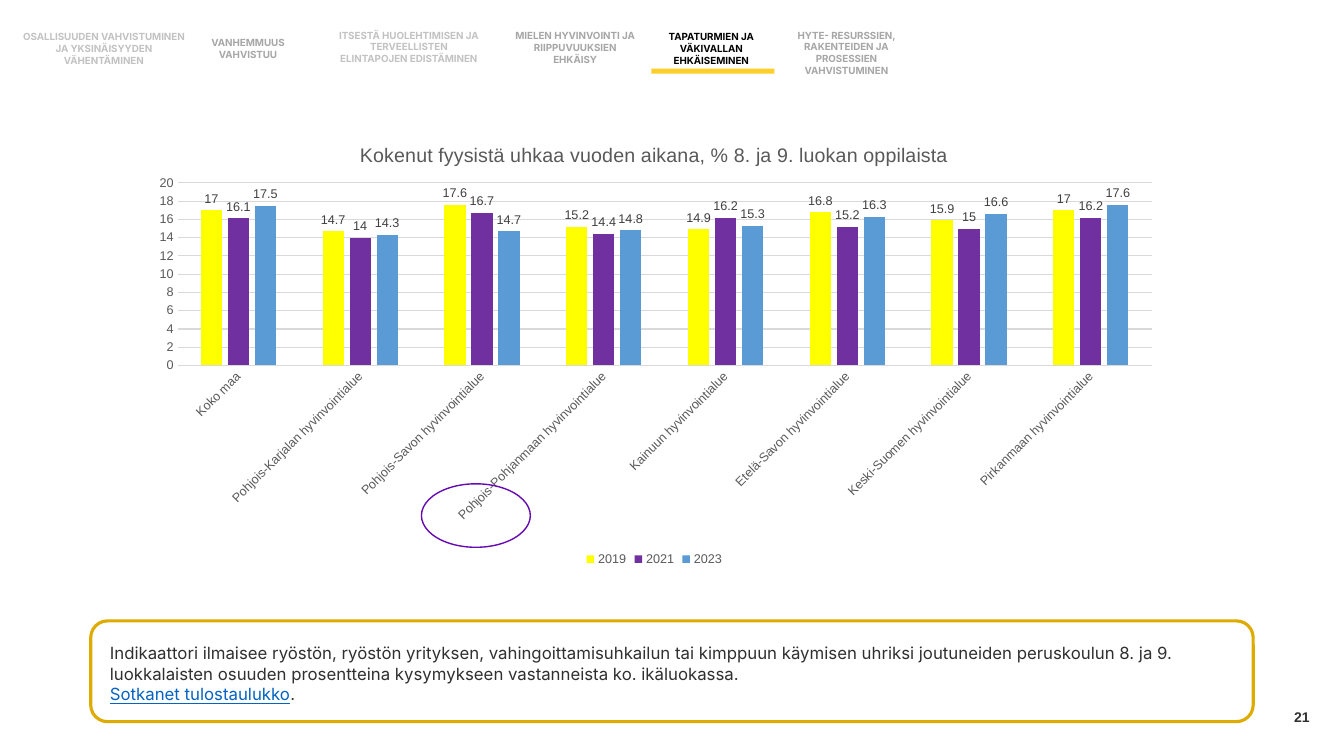
from dataclasses import dataclass

from lxml.etree import SubElement
from pptx import Presentation
from pptx.chart.data import CategoryChartData
from pptx.dml.color import RGBColor
from pptx.enum.chart import XL_CHART_TYPE as ChartType, XL_LABEL_POSITION as LabelPosition
from pptx.enum.chart import XL_LEGEND_POSITION as LegendPosition, XL_TICK_MARK as TickMark
from pptx.enum.shapes import MSO_SHAPE as Preset
from pptx.enum.text import MSO_ANCHOR as Anchor, PP_ALIGN as Align
from pptx.oxml.ns import qn
from pptx.util import Inches, Pt


@dataclass(frozen=True)
class Theme:
    heading_font: str = "Inter"
    chart_font: str = "Arial"
    tab_size: float = 7
    axis_size: float = 9
    page_size: float = 10
    body_size: float = 12
    title_size: float = 14
    faint: str = "C2C2C2"
    muted: str = "A6A6A6"
    active: str = "000000"
    body: str = "303030"
    page: str = "313131"
    link: str = "0563C1"
    axis: str = "595959"
    value: str = "404040"
    grid: str = "D9D9D9"
    marker: str = "FFCF29"
    frame: str = "DEAC00"
    highlight: str = "660AB2"


@dataclass(frozen=True)
class Box:
    left: float
    top: float
    width: float
    height: float

    def inches(self) -> list:
        return [Inches(n) for n in (self.left, self.top, self.width, self.height)]


@dataclass(frozen=True)
class Tab:
    label: str
    box: Box
    color: str


@dataclass(frozen=True)
class Outline:
    preset: Preset
    box: Box
    fill: str = ""
    line: str = ""
    weight: float = 0


@dataclass(frozen=True)
class Year:
    name: str
    color: str
    shares: tuple


THEME = Theme()

TABS = (
    Tab("OSALLISUUDEN VAHVISTUMINEN JA YKSINÄISYYDEN VÄHENTÄMINEN", Box(0.22, 0.36, 1.62, 0.24), THEME.faint),
    Tab("VANHEMMUUS VAHVISTUU", Box(1.85, 0.42, 1.22, 0.12), THEME.muted),
    Tab("ITSESTÄ HUOLEHTIMISEN JA TERVEELLISTEN ELINTAPOJEN EDISTÄMINEN", Box(3.35, 0.29, 1.41, 0.35), THEME.faint),
    Tab("MIELEN HYVINVOINTI JA RIIPPUVUUKSIEN EHKÄISY", Box(5.07, 0.35, 1.27, 0.24), THEME.muted),
    Tab("TAPATURMIEN JA VÄKIVALLAN EHKÄISEMINEN", Box(6.42, 0.36, 1.27, 0.24), THEME.active),
    Tab("HYTE- RESURSSIEN, RAKENTEIDEN JA PROSESSIEN\nVAHVISTUMINEN", Box(7.69, 0.35, 1.41, 0.35), THEME.muted),
)
TAB_MARKER = Outline(Preset.RECTANGLE, Box(6.46, 0.68, 1.22, 0.05), fill=THEME.marker)
INDICATOR_FRAME = Outline(Preset.ROUNDED_RECTANGLE, Box(0.9, 6.16, 11.53, 1), line=THEME.frame, weight=2.25)
REGION_HIGHLIGHT = Outline(Preset.OVAL, Box(4.18, 4.8, 1.08, 0.63), line=THEME.highlight, weight=1)

CHART_TITLE = "Kokenut fyysistä uhkaa vuoden aikana, % 8. ja 9. luokan oppilaista"
REGIONS = ["Koko maa"] + [f"{region} hyvinvointialue" for region in (
    "Pohjois-Karjalan", "Pohjois-Savon", "Pohjois-Pohjanmaan", "Kainuun",
    "Etelä-Savon", "Keski-Suomen", "Pirkanmaan")]
YEARS = (
    Year("2019", "FFFF00", (17, 14.7, 17.6, 15.2, 14.9, 16.8, 15.9, 17)),
    Year("2021", "7030A0", (16.1, 14, 16.7, 14.4, 16.2, 15.2, 15, 16.2)),
    Year("2023", "5B9BD5", (17.5, 14.3, 14.7, 14.8, 15.3, 16.3, 16.6, 17.6)),
)
INDICATOR = (
    "Indikaattori ilmaisee ryöstön, ryöstön yrityksen, vahingoittamisuhkailun tai kimppuun "
    "käymisen uhriksi joutuneiden peruskoulun 8. ja 9. luokkalaisten osuuden prosentteina "
    "kysymykseen vastanneista ko. ikäluokassa."
)


def style(font, name: str, size: float, color: str, bold: bool = False) -> None:
    font.name, font.size, font.bold = name, Pt(size), bold
    font.color.rgb = RGBColor.from_string(color)


def add_text(slide, box: Box, text: str, font: tuple, align=Align.LEFT, anchor=Anchor.MIDDLE):
    frame = slide.shapes.add_textbox(*box.inches()).text_frame
    frame.word_wrap, frame.vertical_anchor = True, anchor
    frame.margin_left = frame.margin_right = frame.margin_top = frame.margin_bottom = 0
    frame.text = text
    for paragraph in frame.paragraphs:
        paragraph.alignment = align
        for run in paragraph.runs:
            style(run.font, *font)
    return frame


def add_outline(slide, outline: Outline) -> None:
    shape = slide.shapes.add_shape(outline.preset, *outline.box.inches())
    shape.shadow.inherit = False
    if outline.fill:
        shape.fill.solid()
        shape.fill.fore_color.rgb = RGBColor.from_string(outline.fill)
    else:
        shape.fill.background()
    if outline.line:
        shape.line.color.rgb = RGBColor.from_string(outline.line)
        shape.line.width = Pt(outline.weight)
    else:
        shape.line.fill.background()


def place_plot(chart, x: float, y: float, w: float, h: float) -> None:
    """Fix the inner plot area, in fractions of the chart."""
    plot_area = chart.plots[0]._element.getparent()
    layout = plot_area.find(qn("c:layout"))
    if layout is None:
        layout = SubElement(plot_area, qn("c:layout"))
        plot_area.insert(0, layout)
    manual = SubElement(layout, qn("c:manualLayout"))
    settings = {"layoutTarget": "inner", "xMode": "edge", "yMode": "edge", "x": x, "y": y, "w": w, "h": h}
    for tag, setting in settings.items():
        SubElement(manual, qn(f"c:{tag}")).set("val", str(setting))


def add_threat_chart(slide, box: Box) -> None:
    data = CategoryChartData()
    data.categories = REGIONS
    for year in YEARS:
        data.add_series(year.name, year.shares)
    chart = slide.shapes.add_chart(ChartType.COLUMN_CLUSTERED, *box.inches(), data).chart
    style(chart.font, THEME.chart_font, THEME.page_size, THEME.active)
    axis_font = (THEME.chart_font, THEME.axis_size, THEME.axis)

    # Title and legend
    title = chart.chart_title.text_frame
    title.text = CHART_TITLE
    style(title.paragraphs[0].runs[0].font, THEME.chart_font, THEME.title_size, THEME.axis)
    chart.chart_title.include_in_layout = False
    chart.has_legend = True
    chart.legend.position = LegendPosition.BOTTOM
    chart.legend.include_in_layout = False
    style(chart.legend.font, *axis_font)

    # Axes
    regions, shares = chart.category_axis, chart.value_axis
    for axis in (regions, shares):
        axis.major_tick_mark = axis.minor_tick_mark = TickMark.NONE
        style(axis.tick_labels.font, *axis_font)
    regions._element.find(qn("c:txPr")).find(qn("a:bodyPr")).set("rot", "-2700000")
    shares.minimum_scale, shares.maximum_scale, shares.major_unit = 0, 20, 2
    shares.format.line.fill.background()
    for line in (regions.format.line, shares.major_gridlines.format.line):
        line.color.rgb = RGBColor.from_string(THEME.grid)
        line.width = Pt(0.75)

    # Columns and their values
    plot = chart.plots[0]
    plot.gap_width, plot.overlap, plot.vary_by_categories = 219, -27, False
    for series, year in zip(plot.series, YEARS):
        series.format.fill.solid()
        series.format.fill.fore_color.rgb = RGBColor.from_string(year.color)
        labels = series.data_labels
        labels.show_value, labels.position = True, LabelPosition.OUTSIDE_END
        style(labels.font, THEME.chart_font, THEME.axis_size, THEME.value)
    place_plot(chart, 0.04, 0.13, 0.94, 0.41)


def main() -> None:
    deck = Presentation()
    deck.slide_width, deck.slide_height = Inches(13.33), Inches(7.5)
    slide = deck.slides.add_slide(deck.slide_layouts[6])

    # Page number and theme tabs
    add_text(slide, Box(9.99, 6.91, 3, 0.4), "21",
             (THEME.chart_font, THEME.page_size, THEME.page, True), Align.RIGHT)
    for tab in TABS:
        add_text(slide, tab.box, tab.label, (THEME.heading_font, THEME.tab_size, tab.color, True), Align.CENTER)
    add_outline(slide, TAB_MARKER)

    # Indicator description
    add_outline(slide, INDICATOR_FRAME)
    body_font = (THEME.heading_font, THEME.body_size, THEME.body)
    indicator = add_text(slide, Box(1.09, 6.38, 11.16, 0.61), INDICATOR + "\nSotkanet tulostaulukko",
                         body_font, anchor=Anchor.TOP)
    results = indicator.paragraphs[1]
    results.runs[0].font.color.rgb = RGBColor.from_string(THEME.link)
    results.runs[0].font.underline = True
    full_stop = results.add_run()
    full_stop.text = "."
    style(full_stop.font, *body_font)

    # Chart with the highlighted region
    add_threat_chart(slide, Box(1.35, 1.24, 10.28, 4.42))
    add_outline(slide, REGION_HIGHLIGHT)
    deck.save("out.pptx")


if __name__ == "__main__":
    main()
